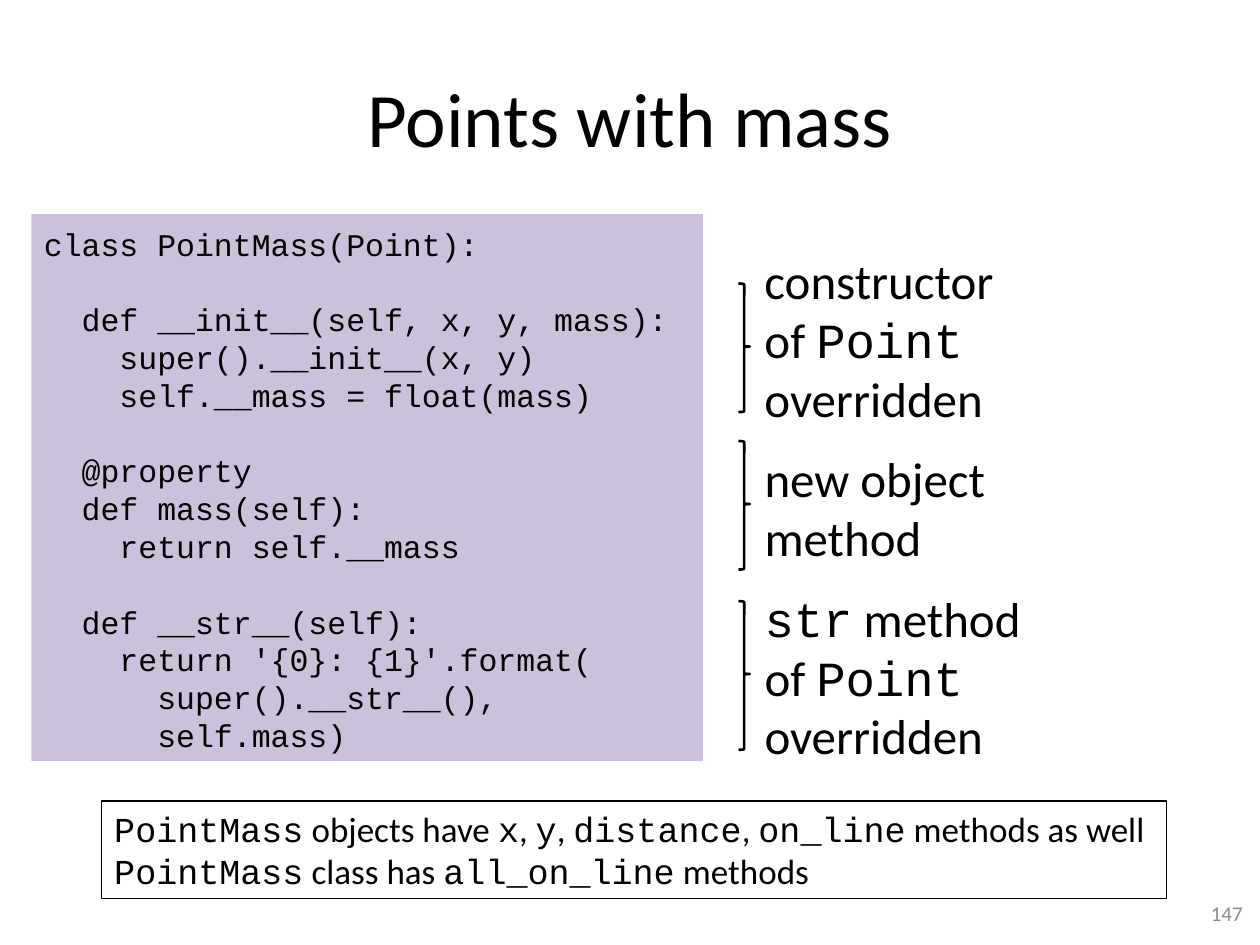
from pptx import Presentation
from pptx.dml.color import RGBColor
from pptx.enum.shapes import MSO_SHAPE
from pptx.enum.text import MSO_ANCHOR, MSO_AUTO_SIZE, PP_ALIGN
from pptx.util import Pt

BLACK = RGBColor(0x00, 0x00, 0x00)
GREY = RGBColor(0x8C, 0x8C, 0x8C)
LILAC = RGBColor(0xCC, 0xC1, 0xDA)
TEXT_FONT = "Calibri"
CODE_FONT = "Courier New"
CODE_SIZE = 18
CODE_LINE = 21.6
INDENT = 21.6  # two code characters


def format_run(run, font, size, color=BLACK):
    run.font.name = font
    run.font.size = Pt(size)
    run.font.color.rgb = color


def add_mixed_line(paragraph, line, size):
    """Append a line in which `backticks` enclose code."""
    for position, part in enumerate(line.split("`")):
        if part:
            run = paragraph.add_run()
            run.text = part
            format_run(run, CODE_FONT if position % 2 else TEXT_FONT, size)


prs = Presentation()
prs.slide_width, prs.slide_height = Pt(720), Pt(540)
slide = prs.slides.add_slide(prs.slide_layouts[5])

title = slide.shapes.title
title.left, title.top, title.width, title.height = Pt(36), Pt(21.6), Pt(648), Pt(90)
title.text_frame.text = "Points with mass"
title.text_frame.vertical_anchor = MSO_ANCHOR.MIDDLE
title.text_frame.paragraphs[0].alignment = PP_ALIGN.CENTER
format_run(title.text_frame.paragraphs[0].runs[0], TEXT_FONT, 44)

# Class definition: blocks are set apart by one line, depth is the indent level
code_blocks = [
    [(0, "class PointMass(Point):")],
    [(1, "def __init__(self, x, y, mass):"),
     (2, "super().__init__(x, y)"),
     (2, "self.__mass = float(mass)")],
    [(1, "@property"),
     (1, "def mass(self):"),
     (2, "return self.__mass")],
    [(1, "def __str__(self):"),
     (2, "return '{0}: {1}'.format("),
     (3, "super().__str__(),"),
     (3, "self.mass)")],
]
listing = slide.shapes.add_textbox(Pt(18), Pt(122.4), Pt(383.76), Pt(312.5))
listing.fill.solid()
listing.fill.fore_color.rgb = LILAC
code_frame = listing.text_frame
code_frame.word_wrap = True
code_frame.margin_top = Pt(6)
for block_number, block in enumerate(code_blocks):
    for line_number, (depth, code) in enumerate(block):
        first = block_number == line_number == 0
        paragraph = code_frame.paragraphs[0] if first else code_frame.add_paragraph()
        paragraph.text = code
        paragraph.line_spacing = Pt(CODE_LINE)
        if line_number == 0 and not first:
            paragraph.space_before = Pt(CODE_LINE)
        paragraph._p.get_or_add_pPr().set("marL", str(Pt(depth * INDENT)))
        format_run(paragraph.runs[0], CODE_FONT, CODE_SIZE)

# Remarks: brace top and height, label top, width and height, lines
remarks = [
    (162, 73.5, 139.7, 147, 108.7, ["constructor", "of `Point`", "overridden"]),
    (343.5, 85, 332.6, 162, 108.7, ["`str` method", "of `Point`", "overridden"]),
    (252, 73.5, 252.7, 142, 75, ["new object", "method"]),
]
for brace_top, brace_height, label_top, label_width, label_height, lines in remarks:
    remark = slide.shapes.add_group_shape()
    brace = remark.shapes.add_shape(
        MSO_SHAPE.RIGHT_BRACE, Pt(422), Pt(brace_top), Pt(6.5), Pt(brace_height))
    brace.adjustments[0] = 0.08
    brace.adjustments[1] = 0.49
    brace.shadow.inherit = False
    brace.fill.background()
    brace.line.color.rgb = BLACK
    brace.line.width = Pt(1.5)

    label = remark.shapes.add_textbox(
        Pt(429.8), Pt(label_top), Pt(label_width), Pt(label_height))
    label.text_frame.word_wrap = False
    label.text_frame.auto_size = MSO_AUTO_SIZE.SHAPE_TO_FIT_TEXT
    paragraph = label.text_frame.paragraphs[0]
    for line_number, line in enumerate(lines):
        if line_number:
            paragraph.add_line_break()
        add_mixed_line(paragraph, line, 28)

inherited = slide.shapes.add_textbox(Pt(58.2), Pt(457.8), Pt(608.4), Pt(55.7))
inherited.line.color.rgb = BLACK
inherited.line.width = Pt(0.75)
inherited.text_frame.word_wrap = False
inherited.text_frame.auto_size = MSO_AUTO_SIZE.SHAPE_TO_FIT_TEXT
add_mixed_line(inherited.text_frame.paragraphs[0],
               "`PointMass` objects have `x`, `y`, `distance`, `on_line` methods as well", 20)
add_mixed_line(inherited.text_frame.add_paragraph(),
               "`PointMass` class has `all_on_line` methods", 20)

page_number = slide.shapes.add_textbox(Pt(549.4), Pt(507.6), Pt(167.8), Pt(28.8))
page_number.text_frame.word_wrap = True
page_number.text_frame.vertical_anchor = MSO_ANCHOR.MIDDLE
page_number.text_frame.text = "147"
page_number.text_frame.paragraphs[0].alignment = PP_ALIGN.RIGHT
format_run(page_number.text_frame.paragraphs[0].runs[0], TEXT_FONT, 12, GREY)

prs.save("out.pptx")
